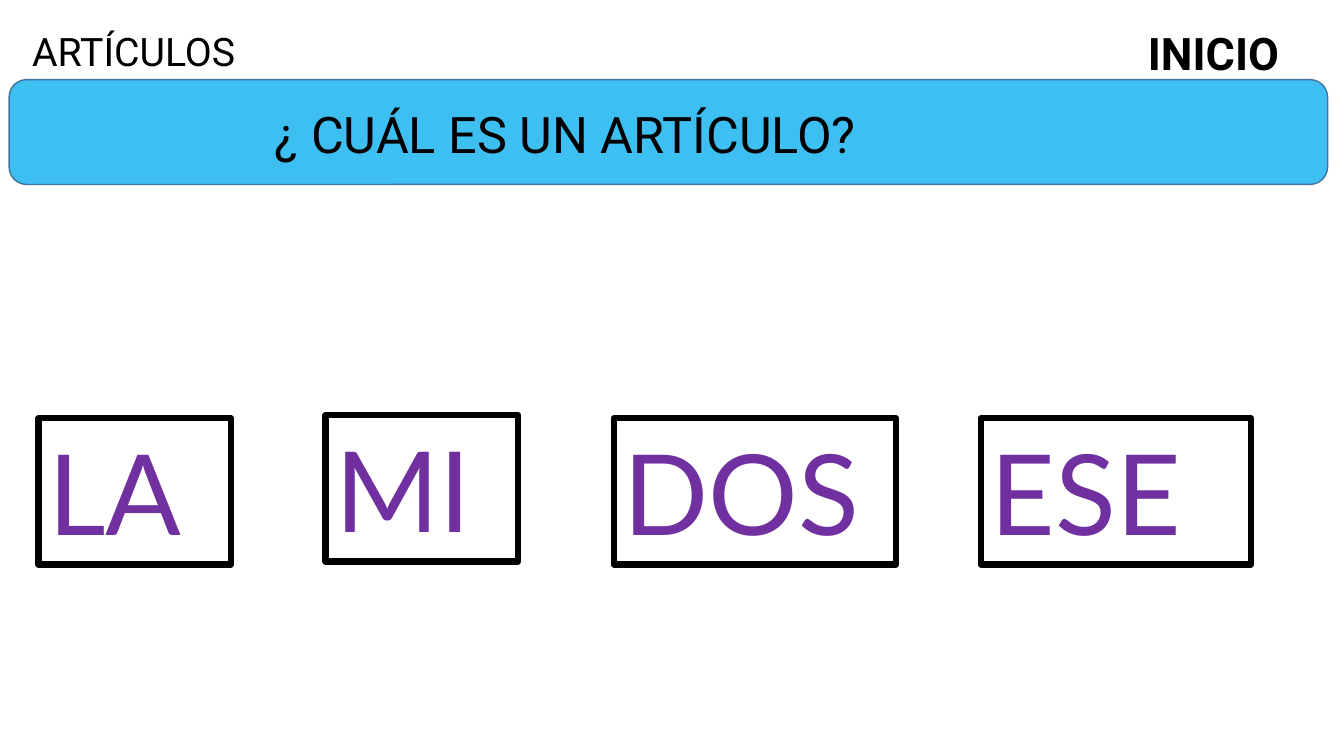
from dataclasses import dataclass

from pptx import Presentation
from pptx.dml.color import RGBColor as RGB
from pptx.enum.shapes import MSO_SHAPE as Shape
from pptx.enum.text import MSO_ANCHOR as Anchor, MSO_AUTO_SIZE as AutoSize, PP_ALIGN as Align
from pptx.util import Pt


@dataclass(frozen=True)
class Theme:
    ink: RGB = RGB(0x00, 0x00, 0x00)
    banner: RGB = RGB(0x3E, 0xBF, 0xF2)
    banner_line: RGB = RGB(0x43, 0x73, 0x9E)
    answer: RGB = RGB(0x70, 0x30, 0xA0)
    text_font: str = "Roboto"
    answer_font: str = "Lato"
    topic_size: int = 28
    home_size: int = 32
    question_size: int = 36
    answer_size: int = 80
    banner_border: float = 1
    answer_border: float = 4.5


@dataclass(frozen=True)
class Box:
    left: float
    top: float
    width: float
    height: float

    def emu(self) -> tuple:
        return Pt(self.left), Pt(self.top), Pt(self.width), Pt(self.height)


@dataclass(frozen=True)
class Answer:
    text: str
    box: Box


THEME = Theme()
ANSWER_TOP, ANSWER_HEIGHT = 298.8, 104.4
ANSWERS = [
    Answer("LA", Box(27.4, ANSWER_TOP, 137.5, ANSWER_HEIGHT)),
    Answer("MI", Box(232.6, ANSWER_TOP - 2.2, 137.5, ANSWER_HEIGHT)),
    Answer("DOS", Box(438.5, ANSWER_TOP, 201.6, ANSWER_HEIGHT)),
    Answer("ESE", Box(700.6, ANSWER_TOP, 193, ANSWER_HEIGHT)),
]


def set_attrs(target, values: dict) -> None:
    for name, value in values.items():
        setattr(target, name, value)


def write(sp, text: str, size: float, font: str = THEME.text_font,
          color: RGB = THEME.ink, bold: bool = False, align: Align = Align.LEFT) -> None:
    tf = sp.text_frame
    set_attrs(tf, {"word_wrap": True, "auto_size": AutoSize.SHAPE_TO_FIT_TEXT,
                   "vertical_anchor": Anchor.TOP})
    p = tf.paragraphs[0]
    set_attrs(p, {"alignment": align, "line_spacing": 1.0, "space_before": Pt(0)})
    r = p.add_run()
    r.text = text
    set_attrs(r.font, {"name": font, "size": Pt(size), "bold": bold})
    r.font.color.rgb = color


def add_label(s, text: str, box: Box, size: float, bold: bool = False) -> None:
    write(s.shapes.add_textbox(*box.emu()), text, size, bold=bold)


def add_outlined(s, kind: Shape, box: Box, line: RGB, width: float):
    sp = s.shapes.add_shape(kind, *box.emu())
    sp.shadow.inherit = False
    sp.fill.background()
    sp.line.color.rgb = line
    sp.line.width = Pt(width)
    return sp


def add_banner(s) -> None:
    sp = add_outlined(s, Shape.ROUNDED_RECTANGLE, Box(6.5, 56.9, 941.8, 74.9),
                      THEME.banner_line, THEME.banner_border)
    sp.fill.solid()
    sp.fill.fore_color.rgb = THEME.banner
    s.shapes.title.element.addprevious(sp.element)


def add_question(s, text: str, box: Box) -> None:
    title = s.shapes.title
    set_attrs(title, dict(zip(("left", "top", "width", "height"), box.emu())))
    write(title, text, THEME.question_size, align=Align.CENTER)


def add_answer(s, answer: Answer) -> None:
    sp = add_outlined(s, Shape.RECTANGLE, answer.box, THEME.ink, THEME.answer_border)
    write(sp, answer.text, THEME.answer_size, THEME.answer_font, THEME.answer)


def main() -> None:
    prs = Presentation()
    set_attrs(prs, {"slide_width": Pt(960), "slide_height": Pt(540)})
    s = prs.slides.add_slide(prs.slide_layouts[5])
    add_banner(s)
    add_question(s, "¿ CUÁL ES UN ARTÍCULO?", Box(38.9, 69.8, 730, 51.1))
    add_label(s, "ARTÍCULOS", Box(15.8, 15.8, 186.5, 41), THEME.topic_size)
    for answer in ANSWERS:
        add_answer(s, answer)
    add_label(s, "INICIO", Box(812.9, 15.1, 147.1, 46.1), THEME.home_size, bold=True)
    prs.save("out.pptx")


if __name__ == "__main__":
    main()
